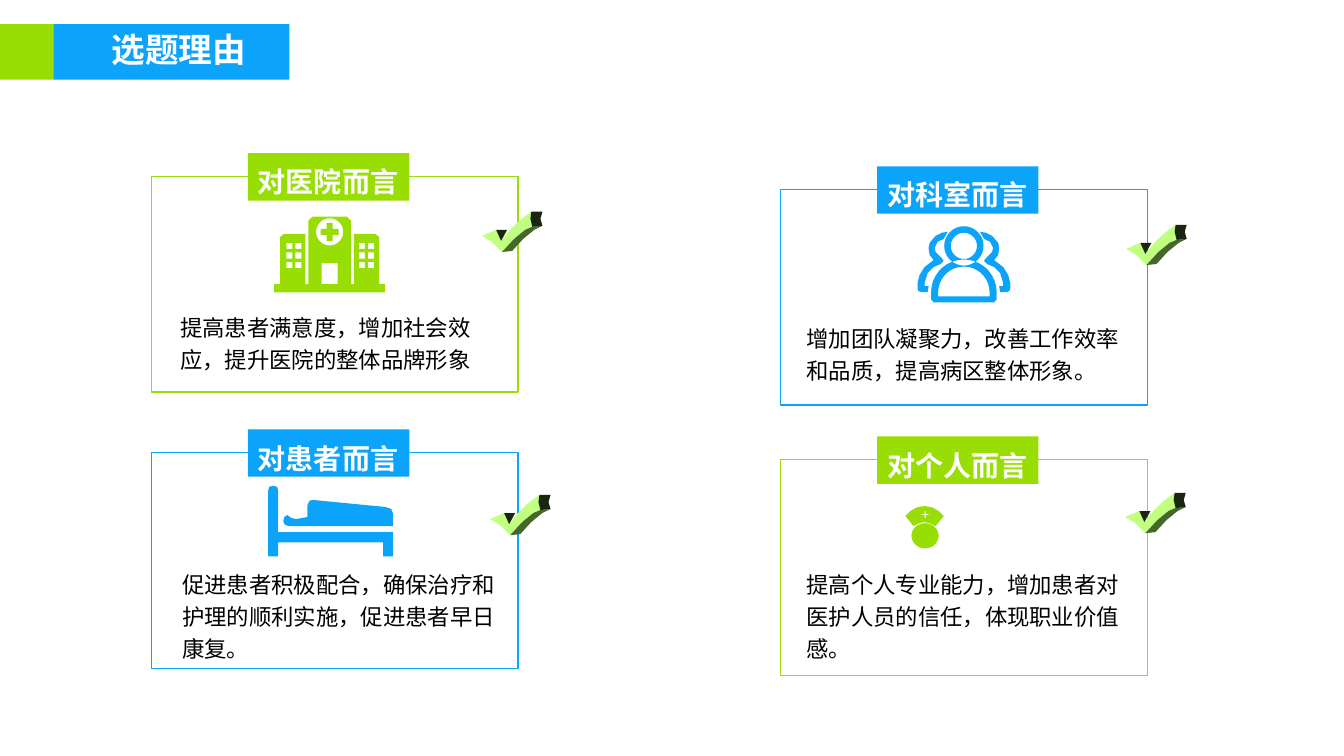
from math import cos, radians, sin
from pptx import Presentation
from pptx.dml.color import RGBColor
from pptx.enum.shapes import MSO_SHAPE
from pptx.enum.text import MSO_ANCHOR, PP_ALIGN
from pptx.util import Inches, Pt

COLUMNS, ROWS = 1333, 750
UNIT = Inches(0.01)
FONT = "Arial"
COLORS = {
    "green": "98DE04", "blue": "0CA3FA", "white": "FFFFFF", "black": "000000",
    "tick": "C0FF80", "tick side": "46672A", "tick end": "1A260F",
}
FRAME_WIDTH, FRAME_HEIGHT = 364, 214


def color(name):
    return RGBColor.from_string(COLORS[name])


def grid(*lengths):
    return [round(length * UNIT) for length in lengths]


def add_block(slide, box, fill=None, line=None, preset=MSO_SHAPE.RECTANGLE):
    shape = slide.shapes.add_shape(preset, *grid(*box))
    shape.shadow.inherit = False
    if fill:
        shape.fill.solid()
        shape.fill.fore_color.rgb = color(fill)
    else:
        shape.fill.background()
    if line:
        shape.line.color.rgb = color(line)
        shape.line.width = Pt(1)
    else:
        shape.line.fill.background()
    return shape


def write(shape, text, size, ink, bold=False, align=PP_ALIGN.LEFT, spacing=1.2, wrap=True):
    frame = shape.text_frame
    frame.text = text
    frame.word_wrap = wrap
    frame.vertical_anchor = MSO_ANCHOR.TOP
    paragraph = frame.paragraphs[0]
    paragraph.alignment = align
    paragraph.line_spacing = spacing
    font = paragraph.runs[0].font
    font.name, font.size, font.bold = FONT, Pt(size), bold
    font.color.rgb = color(ink)


def add_outline(slide, left, top, contours, fill):
    placed = [[grid(left + x, top + y) for x, y in contour] for contour in contours]
    builder = slide.shapes.build_freeform(*placed[0][0], scale=1.0)
    for index, (start, *others) in enumerate(placed):
        if index:
            builder.move_to(*start)
        builder.add_line_segments(others, close=True)
    shape = builder.convert_to_shape()
    shape.shadow.inherit = False
    shape.fill.solid()
    shape.fill.fore_color.rgb = color(fill)
    shape.line.fill.background()


def arc(x, y, radius, start=0, end=360):
    angles = [radians(angle) for angle in range(start, end + 1, 10)]
    return [(x + radius * cos(angle), y + radius * sin(angle)) for angle in angles]


def rectangle(x, y, width, height):
    return [(x, y), (x + width, y), (x + width, y + height), (x, y + height)]


def cross(x, y, reach, half):
    quarter = [(half, -reach), (half, -half), (reach, -half)]
    turns = [(1, 0), (0, 1), (-1, 0), (0, -1)]
    return [(x + a * c - b * s, y + a * s + b * c) for c, s in turns for a, b in quarter]


def mirror(points, width):
    return [(width - x, y) for x, y in reversed(points)]


def draw_hospital(slide, left, top, fill):
    half = [(0, 75), (0, 67), (6, 67), (6, 20), (10, 17), (31, 17), (31, 67),
            (34, 67), (34, 4), (38, 0)]
    windows = [rectangle(x, y, 6, 6) for x in (12, 21, 84, 93) for y in (26, 35.5, 45)]
    contours = [half + mirror(half, 110), rectangle(47, 46, 16, 21),
                arc(55, 15, 13.5), cross(55, 15, 9, 3)]
    add_outline(slide, left, top, contours + windows, fill)


def draw_team(slide, left, top, fill):
    neighbour = [(23, 38), (26, 35), (24, 32), (18, 26), (17, 22), (20, 16), (26, 13),
                 (30, 6), (24, 7), (18, 10), (12, 17), (11, 22), (12, 29), (16, 34),
                 (7, 41), (2, 49), (0, 57), (0, 62), (1, 65), (4, 66), (10, 66),
                 (11, 60), (7, 60), (7, 57), (10, 47), (16, 41)]
    body = arc(46, 66, 32.5, 180, 360) + [(78.5, 73), (76, 76), (16, 76), (13.5, 73)]
    inside = arc(46, 66, 25.5, 180, 360) + [(71.5, 70), (20.5, 70)]
    contours = [arc(46, 20, 19.5), arc(46, 20, 13), body, inside,
                neighbour, mirror(neighbour, 92)]
    add_outline(slide, left, top, contours, fill)


def draw_bed(slide, left, top, fill):
    bed = [(0, 70), (0, 5), (1, 1), (5, 0), (9, 1), (10, 5), (10, 46), (124, 46),
           (124, 70), (114, 70), (114, 56), (10, 56), (10, 70)]
    patient = [(19, 29), (23, 32), (28, 33), (39, 31), (39, 19), (41, 15), (44, 14),
               (116, 21), (122, 23), (124, 28), (124, 40), (20, 40), (16, 38),
               (15, 35), (16, 31)]
    for outline in (bed, patient):
        add_outline(slide, left, top, [outline], fill)


def draw_nurse(slide, left, top, fill):
    add_block(slide, (left + 6, top + 31, 27, 25), fill, preset=MSO_SHAPE.OVAL)
    half = [(19, 30), (14, 31), (8, 34), (0, 24), (5, 19), (11, 15.5), (19, 14)]
    add_outline(slide, left, top, [half + mirror(half, 38), cross(19.5, 22.5, 3.5, 0.5)], fill)


def draw_tick(slide, left, top):
    face = [(0, 24), (14, 18), (19, 29), (27, 19), (37, 9), (49, 0), (48, 7),
            (50, 15), (43, 18), (32, 27), (20, 40), (10, 30)]
    side = [(20, 40), (32, 27), (43, 18), (50, 15), (60, 14), (52, 18), (41, 27), (30, 39)]
    end = [(49, 0), (60, 0), (58, 7), (60, 14), (50, 15), (48, 7)]
    notch = [(14, 18), (25, 18), (19, 29)]
    for outline, fill in ((face, "tick"), (side, "tick side"),
                          (end, "tick end"), (notch, "tick end")):
        add_outline(slide, left, top, [outline], fill)


def draw_card(slide, left, top, theme, title, body, body_box, draw_icon, icon_at, tick_at):
    add_block(slide, (left, top, FRAME_WIDTH, FRAME_HEIGHT), line=theme)
    tab = add_block(slide, (left + 96, top - 23, 160, 47), theme)
    write(tab, title, 20, "white", bold=True, wrap=False)
    x, y, width, height = body_box
    text_box = slide.shapes.add_textbox(*grid(left + x, top + y, width, height))
    write(text_box, body, 16, "black")
    draw_icon(slide, left + icon_at[0], top + icon_at[1], theme)
    draw_tick(slide, left + tick_at[0], top + tick_at[1])


def draw_heading(slide, left, top, height, title):
    add_block(slide, (left, top, 53, height), "green")
    add_block(slide, (left + 53, top, 234, height), "blue")
    text_box = slide.shapes.add_textbox(*grid(left + 100, top, 155, 50))
    write(text_box, title, 24, "white", True, PP_ALIGN.CENTER, 1.0, False)


def main():
    presentation = Presentation()
    presentation.slide_width, presentation.slide_height = grid(COLUMNS, ROWS)
    slide = presentation.slides.add_slide(presentation.slide_layouts[6])
    draw_heading(slide, 0, 24, 55, "选题理由")
    cards = [
        (150, 175, "green", "对医院而言", "提高患者满意度，增加社会效应，提升医院的整体品牌形象",
         (19, 126, 326, 75), draw_hospital, (122, 40), (328, 35)),
        (774, 188, "blue", "对科室而言", "增加团队凝聚力，改善工作效率和品质，提高病区整体形象。",
         (16, 124, 333, 75), draw_team, (136, 36), (343, 35)),
        (150, 449, "blue", "对患者而言", "促进患者积极配合，确保治疗和护理的顺利实施，促进患者早日康复。",
         (21, 107, 330, 107), draw_bed, (116, 33), (336, 42)),
        (774, 456, "green", "对个人而言", "提高个人专业能力，增加患者对医护人员的信任，体现职业价值感。",
         (16, 100, 348, 107), draw_nurse, (124, 32), (342, 33)),
    ]
    for card in cards:
        draw_card(slide, *card)
    presentation.save("out.pptx")


if __name__ == "__main__":
    main()
